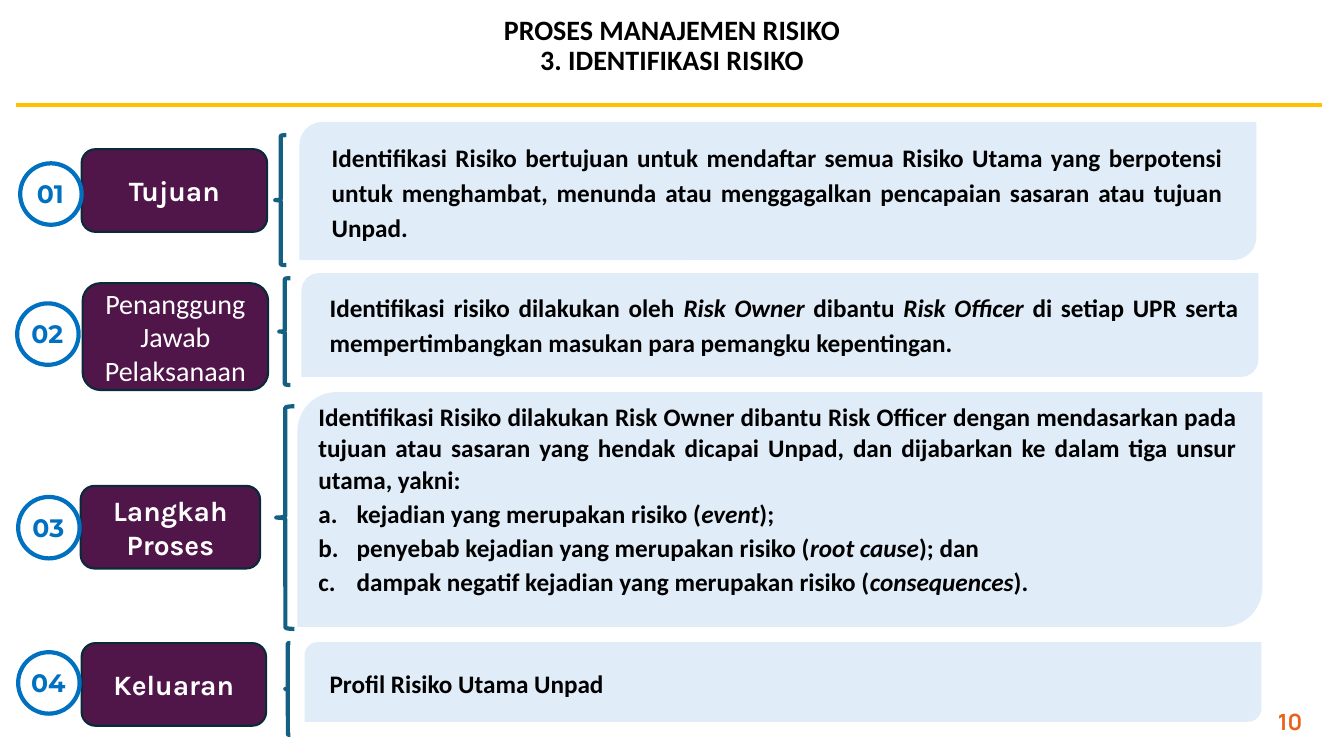
"""Build the risk identification slide with four numbered sections."""
from lxml import etree
from pptx import Presentation
from pptx.dml.color import RGBColor
from pptx.enum.shapes import MSO_CONNECTOR, MSO_SHAPE
from pptx.enum.text import MSO_ANCHOR, MSO_AUTO_SIZE, PP_ALIGN
from pptx.oxml.ns import qn
from pptx.util import Inches, Pt

BLACK = RGBColor(0x00, 0x00, 0x00)
WHITE = RGBColor(0xFF, 0xFF, 0xFF)
PLUM = RGBColor(0x50, 0x16, 0x49)
NAVY = RGBColor(0x09, 0x2A, 0x39)
BLUE = RGBColor(0x00, 0x70, 0xC0)
TEAL = RGBColor(0x15, 0x60, 0x82)
SKY = RGBColor(0xA6, 0xCA, 0xEC)
GOLD = RGBColor(0xFF, 0xC0, 0x00)
ORANGE = RGBColor(0xEA, 0x61, 0x1A)
CENTER, JUSTIFY = PP_ALIGN.CENTER, PP_ALIGN.JUSTIFY
MIDDLE, NO_FIT = MSO_ANCHOR.MIDDLE, MSO_AUTO_SIZE.NONE
PANEL, PILL = MSO_SHAPE.ROUND_2_DIAG_RECTANGLE, MSO_SHAPE.ROUNDED_RECTANGLE
BRACE, OVAL = MSO_SHAPE.LEFT_BRACE, MSO_SHAPE.OVAL
STRAIGHT = MSO_CONNECTOR.STRAIGHT


def draw(shapes, kind, place, fill=None, line=None, width=3):
    shape = shapes.add_shape(kind, *map(Inches, place))
    shape.shadow.inherit = False
    if fill is None:
        shape.fill.background()
    else:
        shape.fill.solid()
        shape.fill.fore_color.rgb = fill
    if line is None:
        shape.line.fill.background()
    else:
        shape.line.color.rgb = line
        shape.line.width = Pt(width)
    return shape


def style(para, face, size, color, bold=True, align=CENTER):
    para.alignment = align
    font = para.font
    font.name, font.size, font.bold = face, Pt(size), bold
    font.color.rgb = color


SECTIONS = [
    dict(panel=(2.97, 1.21, 9.49, 1.37), brace=(2.73, 1.34, 0.11, 1.29),
         pill=(0.81, 1.48, 1.84, 0.82), badge=(0.2, 1.62),
         label="Tujuan", face="Karla",
         box=(3.19, 1.32, 9.04, 1.26), lead=1.15, gap=6,
         text=["Identifikasi Risiko bertujuan untuk mendaftar semua Risiko Utama "
               "yang berpotensi untuk menghambat, menunda atau menggagalkan "
               "pencapaian sasaran atau tujuan Unpad."]),
    dict(panel=(2.99, 2.71, 9.49, 1.03), brace=(2.77, 2.76, 0.11, 1.06),
         pill=(0.82, 2.81, 1.84, 1.06), badge=(0.17, 3.01),
         label="Penanggung Jawab Pelaksanaan", face="Calibri",
         box=(3.17, 2.81, 9.21, 0.86), lead=1.14, gap=3,
         text=["Identifikasi risiko dilakukan oleh *Risk Owner *dibantu "
               "*Risk Officer* di setiap UPR serta mempertimbangkan masukan "
               "para pemangku kepentingan."]),
    dict(panel=(2.95, 3.89, 9.57, 2.33), brace=(2.74, 4.03, 0.18, 2.21),
         pill=(0.8, 4.82, 1.78, 0.82), badge=(0.18, 4.93),
         label="Langkah Proses", face="Karla",
         box=(3.06, 3.92, 9.31, 2.21), lead=1.04, gap=1,
         text=["Identifikasi Risiko dilakukan Risk Owner dibantu Risk Officer "
               "dengan mendasarkan pada tujuan atau sasaran yang hendak dicapai "
               "Unpad, dan dijabarkan ke dalam tiga unsur utama, yakni:",
               "kejadian yang merupakan risiko (*event*);",
               "penyebab kejadian yang merupakan risiko (*root cause*); dan",
               "dampak negatif kejadian yang merupakan risiko (*consequences*)."]),
    dict(panel=(3.02, 6.37, 9.49, 0.79), brace=(2.83, 6.38, 0.05, 0.91),
         pill=(0.81, 6.38, 1.83, 0.82), badge=(0.18, 6.47),
         label="Keluaran", face="Karla",
         box=(3.17, 6.51, 9.05, 0.56), lead=1.25, gap=6,
         text=["Profil Risiko Utama Unpad"]),
]

deck = Presentation()
deck.slide_width, deck.slide_height = Inches(13.33), Inches(7.5)
slide = deck.slides.add_slide(deck.slide_layouts[1])
shapes = slide.shapes
title, body = shapes.title, slide.placeholders[1]

title.left, title.top, title.width, title.height = map(Inches, (1.09, 0.2, 11.15, 0.52))
frame = title.text_frame
frame.text = "PROSES MANAJEMEN RISIKO\v3. IDENTIFIKASI RISIKO"
frame.auto_size, frame.vertical_anchor = NO_FIT, MIDDLE
frame.paragraphs[0].line_spacing = 0.9
style(frame.paragraphs[0], "Calibri", 20, BLACK)

rule = shapes.add_connector(STRAIGHT, *map(Inches, (0.16, 1.04, 13.11, 1.04)))
rule.line.color.rgb = GOLD
rule.line.width = Pt(3)
etree.SubElement(rule.element.spPr, qn("a:effectLst"))

for num, part in enumerate(SECTIONS, 1):
    panel = draw(shapes, PANEL, part["panel"], SKY)
    tint = panel.element.spPr.find(".//" + qn("a:srgbClr"))
    etree.SubElement(tint, qn("a:alpha"), val="34000")
    draw(shapes, BRACE, part["brace"], line=TEAL)

    pill = draw(shapes, PILL, part["pill"], PLUM, NAVY, 1.5)
    pill.text_frame.text = part["label"]
    pill.text_frame.vertical_anchor = MIDDLE
    style(pill.text_frame.paragraphs[0], part["face"], 20, WHITE, part["face"] == "Karla")

    left, top = part["badge"]
    badge = shapes.add_group_shape().shapes
    draw(badge, OVAL, (left, top, 0.61, 0.61), WHITE, BLUE)
    digit = badge.add_textbox(*map(Inches, (left - 0.03, top + 0.1, 0.66, 0.4)))
    digit.text_frame.word_wrap = True
    digit.text_frame.text = f"{num:02}"
    style(digit.text_frame.paragraphs[0], "Montserrat", 18, BLUE)

    place = [Inches(size) for size in part["box"]]
    if num == 1:
        box = body
        box.left, box.top, box.width, box.height = place
        shapes.element.append(box.element)
    else:
        box = shapes.add_textbox(*place)
    frame = box.text_frame
    frame.word_wrap, frame.auto_size = True, NO_FIT
    for row, text in enumerate(part["text"]):
        para = frame.add_paragraph() if row else frame.paragraphs[0]
        for turn, piece in enumerate(text.split("*")):
            run = para.add_run()
            run.text = piece
            if turn % 2:
                run.font.italic = True
        props = para._p.get_or_add_pPr()
        indent = Inches(0.38) if row else 0
        props.set("marL", str(indent))
        props.set("indent", str(-indent))
        if row:
            etree.SubElement(props, qn("a:buAutoNum"), type="alphaLcPeriod")
            para.space_before = Pt(part["gap"])
        else:
            etree.SubElement(props, qn("a:buNone"))
            para.space_before = Pt(0)
        para.line_spacing, para.space_after = part["lead"], Pt(part["gap"])
        style(para, "Calibri", 18, BLACK, align=JUSTIFY)

page = shapes.add_textbox(*map(Inches, (12.31, 7.03, 0.97, 0.27)))
frame = page.text_frame
frame.margin_left = frame.margin_right = frame.margin_top = frame.margin_bottom = 0
frame.word_wrap = True
frame.text = "10"
style(frame.paragraphs[0], "Manrope", 16, ORANGE)

deck.save("out.pptx")
